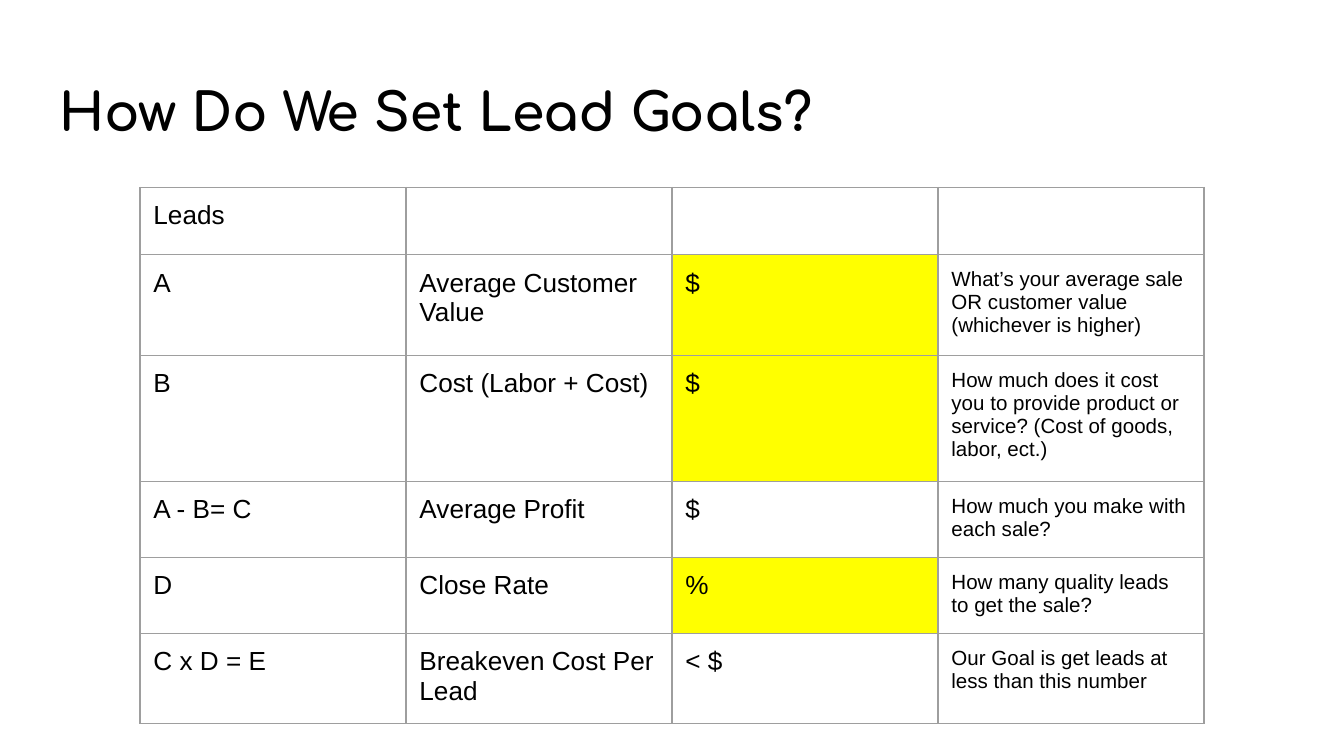
from lxml import etree
from pptx import Presentation
from pptx import util as u
from pptx.dml.color import RGBColor
from pptx.enum import text
from pptx.oxml.ns import qn

COLORS = {"ink": "000000", "grid": "9E9E9E", "input": "FFFF00"}
INSET = u.Pt(7.2)

# Label, measure, unit, explanation, whether the value is filled in by hand
ROWS = [
    ("Leads", "", "", "", False),
    ("A", "Average Customer Value", "$",
     "What’s your average sale OR customer value (whichever is higher)", True),
    ("B", "Cost (Labor + Cost)", "$",
     "How much does it cost you to provide product or service? "
     "(Cost of goods, labor, ect.)", True),
    ("A - B= C", "Average Profit", "$", "How much you make with each sale?", False),
    ("D", "Close Rate", "%", "How many quality leads to get the sale?", True),
    ("C x D = E", "Breakeven Cost Per Lead", "< $",
     "Our Goal is get leads at less than this number", False),
]
UNIT_COL, NOTE_COL = 2, 3


def write(tf, words, size=14, font="Arial", color="ink", bold=False):
    r = tf.paragraphs[0].add_run()
    r.text = words
    r.font.size = u.Pt(size)
    r.font.name = font
    r.font.bold = bold
    r.font.color.rgb = RGBColor.from_string(COLORS[color])


def set_insets(box):
    box.margin_left = box.margin_right = INSET
    box.margin_top = box.margin_bottom = INSET


class Deck:
    def __init__(self, width, height):
        self.prs = Presentation()
        self.prs.slide_width, self.prs.slide_height = u.Pt(width), u.Pt(height)
        self.s = self.prs.slides.add_slide(self.prs.slide_layouts[6])

    def title(self, words, x, y, w, h):
        tf = self.s.shapes.add_textbox(u.Pt(x), u.Pt(y), u.Pt(w), u.Pt(h)).text_frame
        tf.word_wrap = True
        tf.vertical_anchor = text.MSO_ANCHOR.TOP
        set_insets(tf)
        write(tf, words, size=28, font="Comfortaa", bold=True)

    def borders(self, cell, width=0.75):
        tc_pr = cell._tc.get_or_add_tcPr()
        for i, side in enumerate(("lnL", "lnR", "lnT", "lnB")):
            ln = etree.Element(qn("a:" + side), w=str(u.Pt(width)))
            fill = etree.SubElement(ln, qn("a:solidFill"))
            etree.SubElement(fill, qn("a:srgbClr"), val=COLORS["grid"])
            tc_pr.insert(i, ln)

    def table(self, rows, x, y, col_w, row_h):
        n_cols = len(rows[0]) - 1
        table = self.s.shapes.add_table(
            len(rows), n_cols, u.Pt(x), u.Pt(y),
            u.Pt(col_w * n_cols), u.Pt(row_h * len(rows))).table
        table.first_row = table.horz_banding = False
        for i, (*words, is_input) in enumerate(rows):
            for j, word in enumerate(words):
                cell = table.cell(i, j)
                set_insets(cell)
                if is_input and j == UNIT_COL:
                    cell.fill.solid()
                    cell.fill.fore_color.rgb = RGBColor.from_string(COLORS["input"])
                else:
                    cell.fill.background()
                self.borders(cell)
                if word:
                    write(cell.text_frame, word, size=11 if j == NOTE_COL else 14)


deck = Deck(720, 405)
deck.title("How Do We Set Lead Goals?", x=24.5, y=35, w=671, h=45)
# Rows grow from this minimum height to fit their text
deck.table(ROWS, x=75, y=100.5, col_w=142.5, row_h=30)
deck.prs.save("out.pptx")
